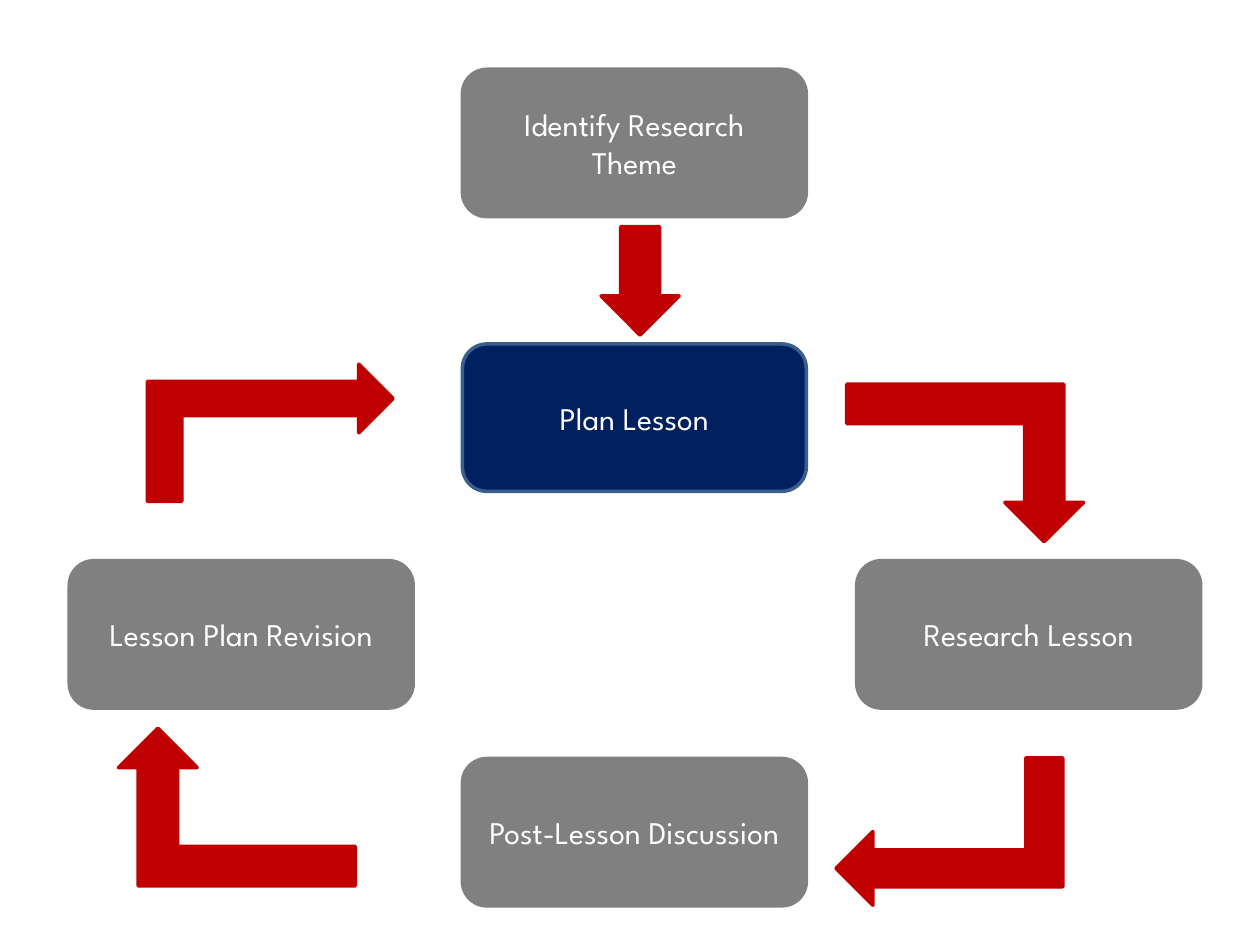
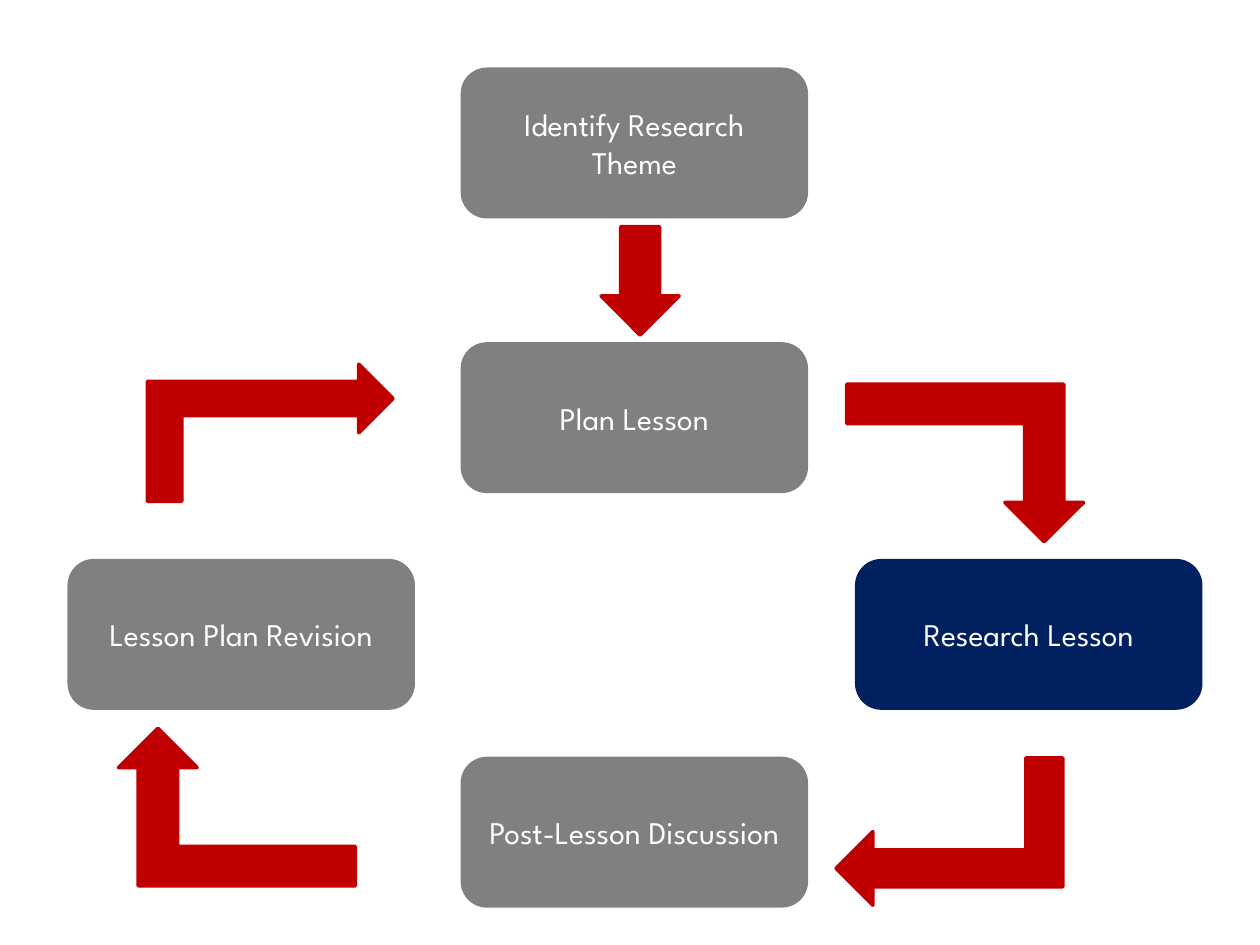
from dataclasses import dataclass

from pptx import Presentation
from pptx import util as u
from pptx.dml.color import RGBColor
from pptx.enum import shapes, text


@dataclass(frozen=True)
class Theme:
    background: str = "FFFFFF"
    step: str = "808080"
    current: str = "002060"
    current_edge: str = "3A5F8C"
    arrow: str = "C00000"
    label: str = "FFFFFF"
    font: str = "League Spartan"
    label_size: int = 18
    line_width: int = 2


THEME = Theme()
STEP_SIZE = (2.73, 1.17)
LEFT, CENTER, RIGHT = 0.55, 3.67, 6.8
SIDE_TOP = 4.45

STEPS = {
    "Identify Research Theme": (CENTER, 0.55),
    "Plan Lesson": (CENTER, 2.73),
    "Research Lesson": (RIGHT, SIDE_TOP),
    "Post-Lesson Discussion": (CENTER, 6.02),
    "Lesson Plan Revision": (LEFT, SIDE_TOP),
}

BENT = shapes.MSO_SHAPE.BENT_UP_ARROW
DOWN = shapes.MSO_SHAPE.DOWN_ARROW
ARROWS = [
    (BENT, (6.72, 3.05, 1.88, 1.25), 0, "flipV"),
    (BENT, (6.95, 5.7, 1.17, 1.8), 270, "flipH"),
    (BENT, (1.6, 2.46, 1.09, 1.95), 90, "flipH"),
    (BENT, (0.94, 5.78, 1.88, 1.25), 0, "flipH"),
    (DOWN, (4.77, 1.8, 0.62, 0.86), 0, None),
]

SLIDES = [
    ("Plan Lesson", THEME.current_edge),
    ("Research Lesson", THEME.current),
]


def set_format(target, values):
    for name, value in values.items():
        setattr(target, name, value)


def add_solid_shape(group, kind, box, fill, edge):
    shape = group.shapes.add_shape(kind, *map(u.Inches, box))
    shape.shadow.inherit = False
    shape.fill.solid()
    shape.fill.fore_color.rgb = RGBColor.from_string(fill)
    shape.line.color.rgb = RGBColor.from_string(edge)
    shape.line.width = u.Pt(THEME.line_width)
    return shape


def add_step(group, label, position, fill, edge):
    shape = add_solid_shape(group, shapes.MSO_SHAPE.ROUNDED_RECTANGLE,
                            position + STEP_SIZE, fill, edge)
    frame = shape.text_frame
    set_format(frame, {"word_wrap": True,
                       "vertical_anchor": text.MSO_ANCHOR.MIDDLE})
    paragraph = frame.paragraphs[0]
    paragraph.alignment = text.PP_ALIGN.CENTER
    run = paragraph.add_run()
    run.text = label
    set_format(run.font, {"name": THEME.font, "size": u.Pt(THEME.label_size)})
    run.font.color.rgb = RGBColor.from_string(THEME.label)


def add_arrow(group, kind, box, rotation, flip):
    shape = add_solid_shape(group, kind, box, THEME.arrow, THEME.arrow)
    shape.rotation = rotation
    if flip:
        shape._element.spPr.xfrm.set(flip, "1")


def add_cycle_slide(presentation, current_step, current_edge):
    slide = presentation.slides.add_slide(presentation.slide_layouts[6])
    slide.background.fill.solid()
    slide.background.fill.fore_color.rgb = RGBColor.from_string(THEME.background)
    group = slide.shapes.add_group_shape()
    for label, position in STEPS.items():
        colors = (THEME.step, THEME.step)
        if label == current_step:
            colors = (THEME.current, current_edge)
        add_step(group, label, position, *colors)
    for arrow in ARROWS:
        add_arrow(group, *arrow)


def main():
    presentation = Presentation()
    set_format(presentation, {"slide_width": u.Inches(10),
                              "slide_height": u.Inches(7.5)})
    for current_step, current_edge in SLIDES:
        add_cycle_slide(presentation, current_step, current_edge)
    presentation.save("out.pptx")


if __name__ == "__main__":
    main()
